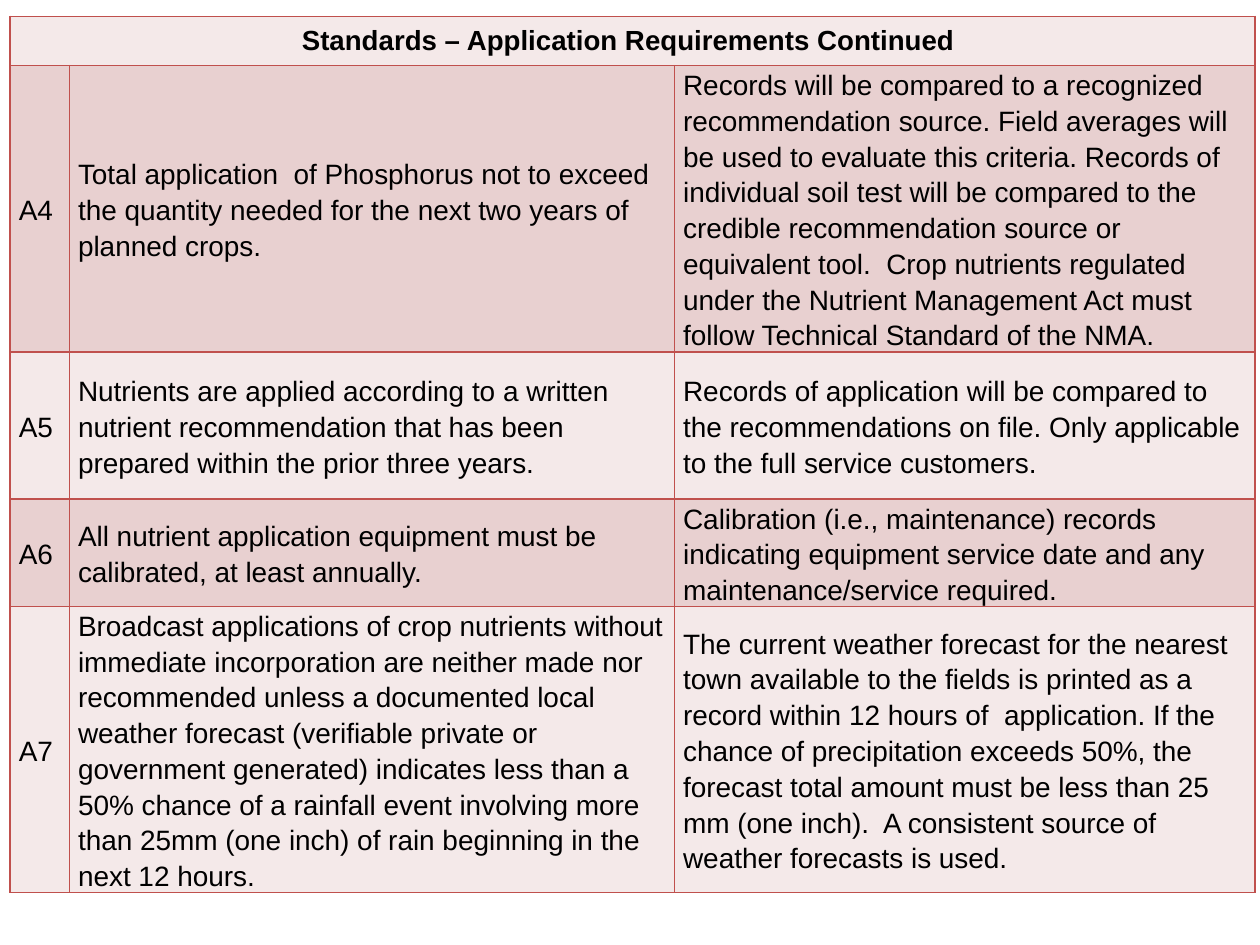
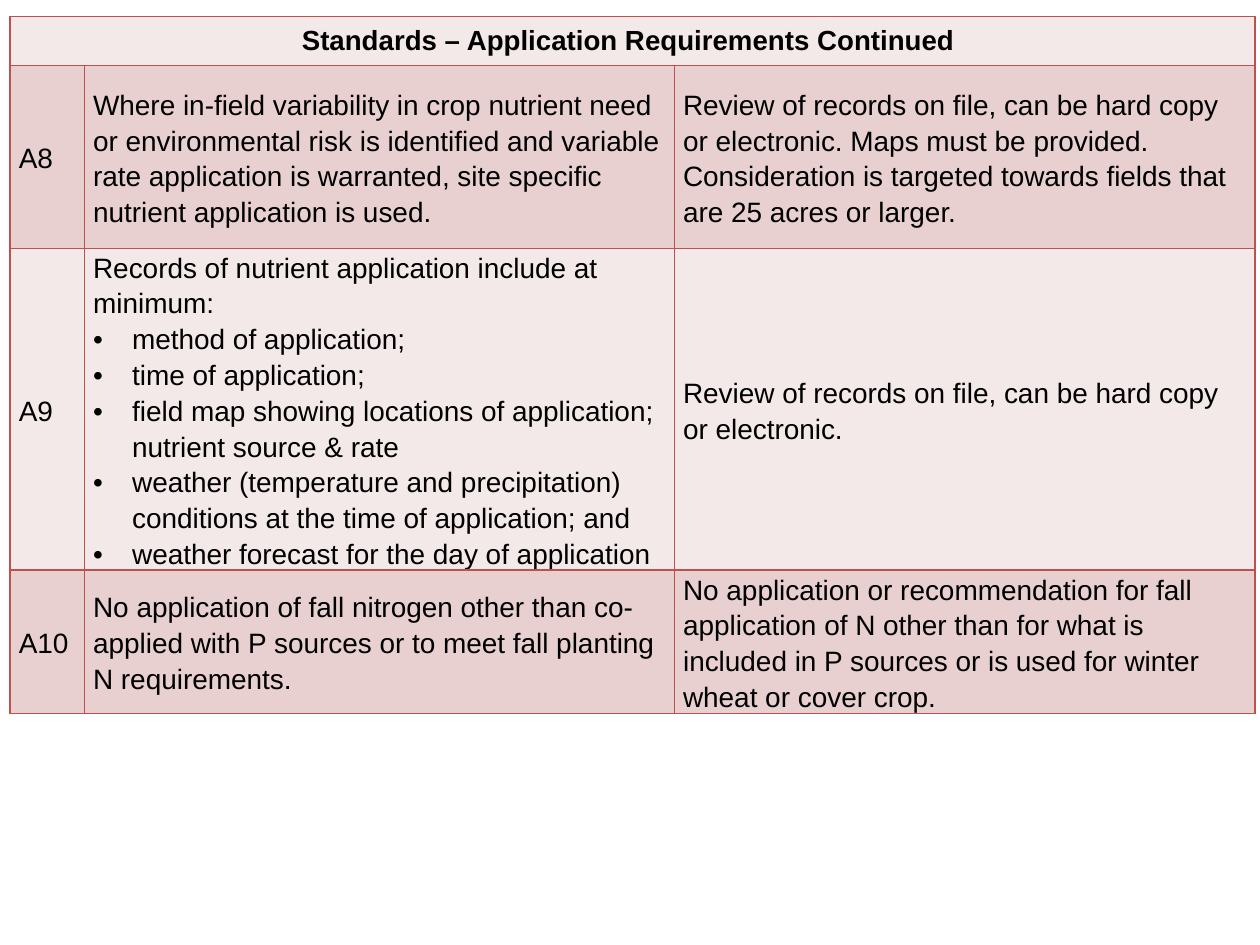
import lxml.etree
import pptx
import pptx.dml.color
import pptx.enum.text
import pptx.oxml.ns
import pptx.util

FONT = "Arial"
INK, BORDER = "000000", "C0504D"
BANDS = ["F4E9E9", "E8D0D0"]
HEADING = "Standards – Application Requirements Continued "
HEADING_SIZE, BODY_SIZE, SPACING = 15.8, 16, 1.15
LINE = pptx.util.Pt(BODY_SIZE * SPACING * 1.11)
HEADING_LINES = 1.38
TEXT_COLUMNS, EVIDENCE_COLUMN = 52.75, 46.1
BULLET_INDENT = pptx.util.Inches(0.31)

# Each row: code, height in text lines, requirement paragraphs, evidence.
PAGES = [
    (4.7, [
        ("A4", 8, ["Total application  of Phosphorus not to exceed the quantity needed for the next "
                   "two years of planned crops."],
         "Records will be compared to a recognized recommendation source. Field averages will be used "
         "to evaluate this criteria. Records of individual soil test will be compared to the credible "
         "recommendation source or equivalent tool.  Crop nutrients regulated under the Nutrient "
         "Management Act must follow Technical Standard of the NMA."),
        ("A5", 4.12, ["Nutrients are applied according to a written nutrient recommendation that has "
                      "been prepared within the prior three years."],
         "Records of application will be compared to the recommendations on file. Only applicable to "
         "the full service customers."),
        ("A6", 3, ["All nutrient application equipment must be calibrated, at least annually."],
         "Calibration (i.e., maintenance) records indicating equipment service date and any "
         "maintenance/service required."),
        ("A7", 8, ["Broadcast applications of crop nutrients without immediate incorporation are "
                   "neither made nor recommended unless a documented local weather forecast "
                   "(verifiable private or government generated) indicates less than a 50% chance of "
                   "a rainfall event involving more than 25mm (one inch) of rain beginning in the "
                   "next 12 hours."],
         "The current weather forecast for the nearest town available to the fields is printed as a "
         "record within 12 hours of  application. If the chance of precipitation exceeds 50%, the "
         "forecast total amount must be less than 25 mm (one inch).  A consistent source of weather "
         "forecasts is used."),
    ]),
    (5.9, [
        ("A8", 5.11, ["Where in-field variability in crop nutrient need or environmental risk is "
                      "identified and variable rate application is warranted, site specific nutrient "
                      "application is used."],
         "Review of records on file, can be hard copy or electronic. Maps must be provided. "
         "Consideration is targeted towards fields that are 25 acres or larger."),
        ("A9", 9, ["Records of nutrient application include at minimum:",
                   "method of application;",
                   "time of application;",
                   "field map showing locations of application; nutrient source & rate",
                   "weather (temperature and precipitation) conditions at the time of application; and",
                   "weather forecast for the day of application"],
         "Review of records on file, can be hard copy or electronic."),
        ("A10", 4, ["No application of fall nitrogen other than co-applied with P sources or to meet "
                    "fall planting N requirements."],
         "No application or recommendation for fall application of N other than for what is included "
         "in P sources or is used for winter wheat or cover crop."),
    ]),
]


def color(hex_text):
    """Turn a hex string into a colour."""
    return pptx.dml.color.RGBColor.from_string(hex_text)


def add_child(parent, tag, **attributes):
    """Append a drawing element and return it."""
    return lxml.etree.SubElement(parent, pptx.oxml.ns.qn(tag), attributes)


def style_cell(cell, fill, side_inset, end_inset):
    """Give a cell its borders, fill and insets."""
    properties = cell._tc.get_or_add_tcPr()
    for side in "LRTB":
        line = add_child(properties, f"a:ln{side}", w=str(pptx.util.Pt(1)))
        add_child(add_child(line, "a:solidFill"), "a:srgbClr", val=BORDER)
    cell.fill.solid()
    cell.fill.fore_color.rgb = color(fill)
    cell.margin_left = cell.margin_right = pptx.util.Inches(side_inset)
    cell.margin_top = cell.margin_bottom = pptx.util.Inches(end_inset)


def add_text(para, text, size, bold=False):
    """Add one run in the shared font."""
    span = para.add_run()
    span.text = text
    span.font.name, span.font.size, span.font.bold = FONT, pptx.util.Pt(size), bold
    span.font.color.rgb = color(INK)


def add_bullet(para):
    """Hang a bullet in front of a paragraph."""
    properties = para._p.get_or_add_pPr()
    properties.set("marL", str(BULLET_INDENT))
    properties.set("indent", str(-BULLET_INDENT))
    add_child(properties, "a:buFont", typeface=FONT)
    add_child(properties, "a:buChar", char="•")


def fill_heading(table):
    """Write the heading across the first row."""
    for cell in table.rows[0].cells:
        style_cell(cell, BANDS[0], 0.15, 0.07)
    table.cell(0, 0).merge(table.cell(0, 2))
    para = table.cell(0, 0).text_frame.paragraphs[0]
    para.alignment = pptx.enum.text.PP_ALIGN.CENTER
    add_text(para, HEADING, HEADING_SIZE, True)


def fill_body_cell(cell, texts, fill):
    """Write a lead paragraph and any bullets that follow it."""
    style_cell(cell, fill, 0.07, 0)
    cell.vertical_anchor = pptx.enum.text.MSO_ANCHOR.MIDDLE
    for index, text in enumerate(texts):
        para = cell.text_frame.add_paragraph() if index else cell.text_frame.paragraphs[0]
        para.line_spacing = SPACING
        if index:
            add_bullet(para)
        add_text(para, text, BODY_SIZE)


def add_standards(page, box, code_column, standards):
    """Place the table of standards in a box, with columns in hundredths of its width."""
    left, top, width = box
    heights = [round(LINE * lines) for lines in [HEADING_LINES] + [row[1] for row in standards]]
    frame = page.shapes.add_table(len(heights), 3, left, top, width, sum(heights))
    table = frame.table
    table.first_row = table.horz_banding = False
    shares = [code_column, TEXT_COLUMNS - code_column, EVIDENCE_COLUMN]
    for column, share in zip(table.columns, shares):
        column.width = round(width * share / sum(shares))
    for row, height in zip(table.rows, heights):
        row.height = height
    fill_heading(table)
    for index, (code, _, requirement, evidence) in enumerate(standards, 1):
        for cell, texts in zip(table.rows[index].cells, ([code], requirement, [evidence])):
            fill_body_cell(cell, texts, BANDS[index % 2])


def main():
    """Build and save the deck."""
    deck = pptx.Presentation()
    deck.slide_width, deck.slide_height = pptx.util.Inches(10), pptx.util.Inches(7.5)
    box = [pptx.util.Inches(length) for length in (0.08, 0.13, 9.88)]
    for code_column, standards in PAGES:
        page = deck.slides.add_slide(deck.slide_layouts[6])
        add_standards(page, box, code_column, standards)
    deck.save("out.pptx")


if __name__ == "__main__":
    main()
